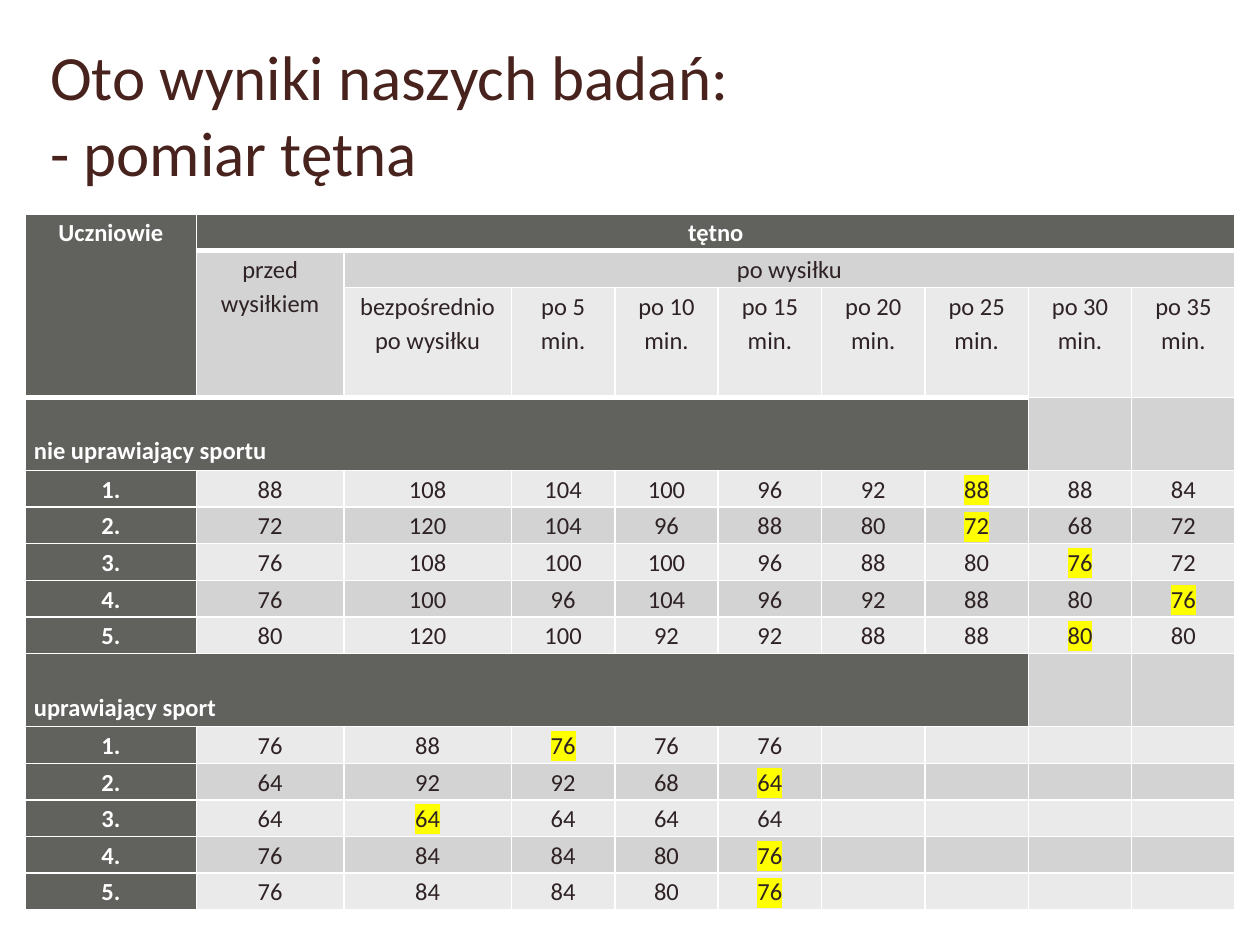
from lxml import etree
from pptx import Presentation
from pptx.dml.color import RGBColor
from pptx.enum import text as t
from pptx.oxml import ns
from pptx.util import Pt

COLORS = {"title": "48231E", "dark": "61625E", "mid": "D2D3D2", "light": "EAEAEA",
          "ink": "2E2224", "white": "FFFFFF", "mark": "FFFF00"}
FONT = "Calibri"
LINE = 20.92  # height of a one-line row
COLUMNS = [97.9, 84.2, 95.8] + [59.1] * 7
ROWS = [1, 1, 3, 2] + [1] * 5 + [2] + [1] * 5  # in lines

# Pulse before exercise, right after it, then every 5 minutes
GROUPS = [
    ("nie uprawiający sportu", [
        [88, 108, 104, 100, 96, 92, 88, 88, 84],
        [72, 120, 104, 96, 88, 80, 72, 68, 72],
        [76, 108, 100, 100, 96, 88, 80, 76, 72],
        [76, 100, 96, 104, 96, 92, 88, 80, 76],
        [80, 120, 100, 92, 92, 88, 88, 80, 80],
    ]),
    ("uprawiający sport", [
        [76, 88, 76, 76, 76],
        [64, 92, 92, 68, 64],
        [64, 64, 64, 64, 64],
        [76, 84, 84, 80, 76],
        [76, 84, 84, 80, 76],
    ]),
]


def rgb(name):
    return RGBColor.from_string(COLORS[name])


def add_color(parent, tag, name):
    holder = etree.SubElement(parent, ns.qn(tag))
    etree.SubElement(holder, ns.qn("a:srgbClr"), val=COLORS[name])
    return holder


def set_borders(cell, bottom=1):
    props = cell._tc.get_or_add_tcPr()
    for side, width in (("L", 1), ("R", 1), ("T", 1), ("B", bottom)):
        line = etree.SubElement(props, ns.qn(f"a:ln{side}"), w=str(Pt(width)))
        add_color(line, "a:solidFill", "white")


def highlight(run):
    props = run._r.get_or_add_rPr()
    marker = add_color(props, "a:highlight", "mark")
    props.find(ns.qn("a:solidFill")).addnext(marker)


def fill_cell(cell, words, fill, align=t.PP_ALIGN.CENTER, marked=False):
    cell.fill.solid()
    cell.fill.fore_color.rgb = rgb(fill)
    cell.margin_left = cell.margin_right = Pt(5)
    cell.margin_top = cell.margin_bottom = 0
    cell.text_frame.text = words
    for paragraph in cell.text_frame.paragraphs:
        paragraph.alignment = align
        paragraph.line_spacing = 1.15
        if not words:  # keeps an empty cell as low as its row
            etree.SubElement(paragraph._p, ns.qn("a:endParaRPr"), sz="1400")
        for run in paragraph.runs:
            run.font.name, run.font.size = FONT, Pt(14)
            run.font.bold = fill == "dark"
            run.font.color.rgb = rgb("white" if fill == "dark" else "ink")
            if marked:
                highlight(run)


def fill_header(table):
    table.cell(0, 0).merge(table.cell(2, 0))
    table.cell(0, 1).merge(table.cell(0, 9))
    table.cell(1, 1).merge(table.cell(2, 1))
    table.cell(1, 2).merge(table.cell(1, 9))
    fill_cell(table.cell(0, 0), "Uczniowie", "dark")
    fill_cell(table.cell(0, 1), "tętno", "dark")
    fill_cell(table.cell(1, 1), "przed wysiłkiem", "mid")
    fill_cell(table.cell(1, 2), "po wysiłku", "mid")
    fill_cell(table.cell(2, 2), "bezpośrednio\npo wysiłku", "light")
    for step in range(1, 8):
        fill_cell(table.cell(2, 2 + step), f"po {5 * step} min.", "light")


def fill_group(table, top, heading, pupils):
    # Heading row
    head = table.cell(top, 0)
    head.merge(table.cell(top, 7))
    fill_cell(head, heading, "dark", t.PP_ALIGN.LEFT)
    head.vertical_anchor = t.MSO_ANCHOR.BOTTOM
    head.margin_bottom = Pt(2.4)
    for column in (8, 9):
        fill_cell(table.cell(top, column), "", "mid")
    # Pupils; the first return to the resting pulse is marked
    for number, pulse in enumerate(pupils, 1):
        row = top + number
        band = "light" if number % 2 else "mid"
        recovered = next(i for i, rate in enumerate(pulse) if i and rate <= pulse[0])
        fill_cell(table.cell(row, 0), f"{number}.", "dark")
        for i in range(9):
            words = str(pulse[i]) if i < len(pulse) else ""
            fill_cell(table.cell(row, i + 1), words, band, marked=i == recovered)


def add_results(slide, left, top):
    width, height = sum(COLUMNS), sum(ROWS) * LINE
    table = slide.shapes.add_table(len(ROWS), len(COLUMNS), Pt(left), Pt(top),
                                   Pt(width), Pt(height)).table
    table.first_row = table.horz_banding = False
    for column, size in zip(table.columns, COLUMNS):
        column.width = Pt(size)
    for row, lines in zip(table.rows, ROWS):
        row.height = Pt(lines * LINE)
    for r in range(len(ROWS)):
        for c in range(len(COLUMNS)):
            set_borders(table.cell(r, c), 3 if r == 0 or (r, c) == (2, 0) else 1)
    fill_header(table)
    for top_row, (heading, pupils) in zip((3, 9), GROUPS):
        fill_group(table, top_row, heading, pupils)


def add_title(slide, left, top, width, height):
    frame = slide.shapes.add_textbox(Pt(left), Pt(top), Pt(width), Pt(height)).text_frame
    frame.word_wrap = True
    paragraph = frame.paragraphs[0]
    paragraph.text = "Oto wyniki naszych badań:\v- pomiar tętna"
    paragraph.space_before = Pt(4)
    for run in paragraph.runs:
        run.font.name, run.font.size = FONT, Pt(36)
        run.font.color.rgb = rgb("title")


def main():
    deck = Presentation()
    deck.slide_width, deck.slide_height = Pt(720), Pt(540)
    slide = deck.slides.add_slide(deck.slide_layouts[6])
    add_title(slide, 21.6, 18, 676.8, 139)
    add_results(slide, 14.4, 122.4)
    deck.save("out.pptx")


if __name__ == "__main__":
    main()
